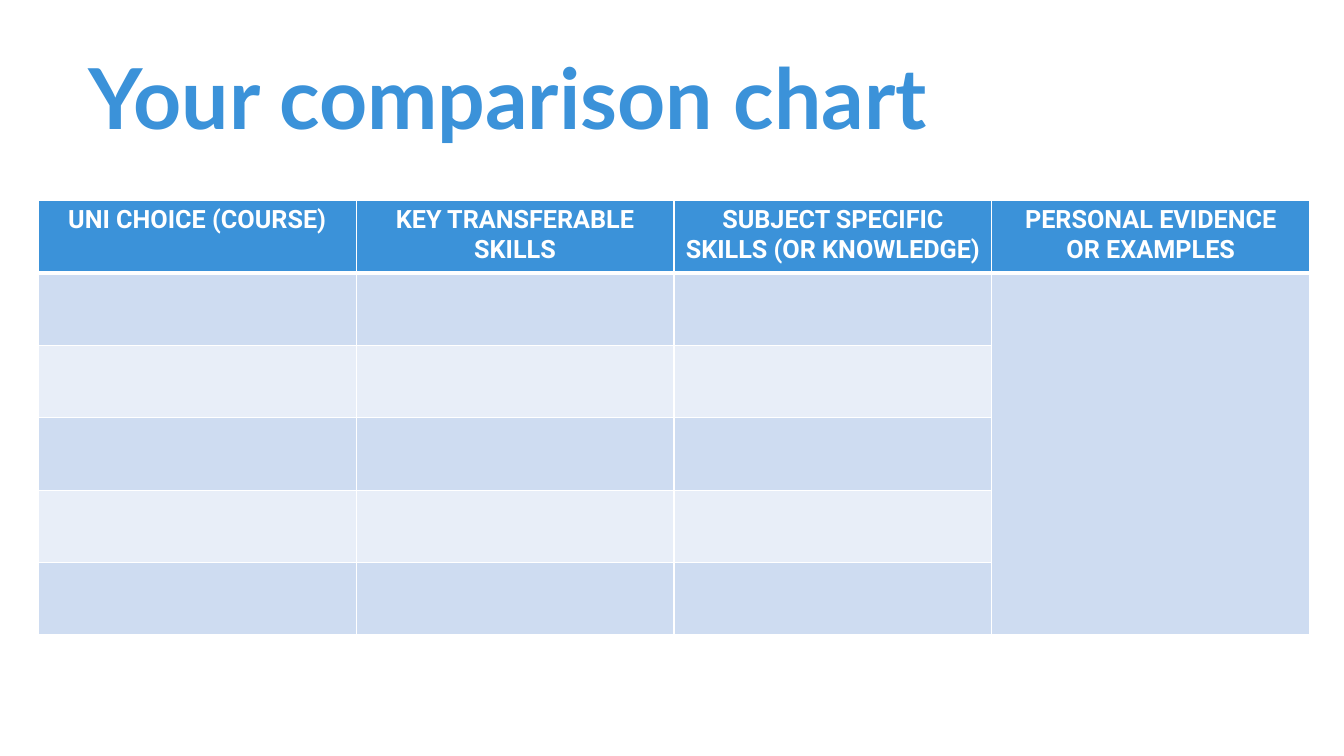
from lxml import etree
from pptx import Presentation
from pptx.dml.color import RGBColor
from pptx.enum.text import MSO_ANCHOR, PP_ALIGN
from pptx.oxml.ns import qn
from pptx.util import Inches, Pt

BLUE = RGBColor(0x3B, 0x92, 0xD9)
DARK = RGBColor(0xCE, 0xDC, 0xF1)
PALE = RGBColor(0xE8, 0xEE, 0xF8)
WHITE = RGBColor(0xFF, 0xFF, 0xFF)
LEFT, CENTER = PP_ALIGN.LEFT, PP_ALIGN.CENTER
BOTTOM = MSO_ANCHOR.BOTTOM

HEADS = [
    ["UNI CHOICE (COURSE)"],
    ["KEY TRANSFERABLE SKILLS"],
    ["SUBJECT SPECIFIC SKILLS (OR KNOWLEDGE)"],
    ["PERSONAL EVIDENCE", "OR EXAMPLES"],
]
ROWS, COLS = 6, len(HEADS)


def add_run(para, text, font, size, color):
    run = para.add_run()
    run.text = text
    run.font.name = font
    run.font.size = Pt(size)
    run.font.bold = True
    run.font.color.rgb = color


def add_edge(cell, side, width):
    props = cell._tc.get_or_add_tcPr()
    line = etree.SubElement(props, qn("a:ln" + side), w=str(Pt(width)))
    fill = etree.SubElement(line, qn("a:solidFill"))
    etree.SubElement(fill, qn("a:srgbClr"), val=str(WHITE))


prs = Presentation()
prs.slide_width = Inches(13.33)
prs.slide_height = Inches(7.5)
slide = prs.slides.add_slide(prs.slide_layouts[5])

frame = slide.shapes.add_table(
    ROWS, COLS, Inches(0.38), Inches(1.99), Inches(12.61), Inches(4.31))
table = frame.table

for r in range(ROWS):
    for c in range(COLS):
        cell = table.cell(r, c)
        for side in "LRTB":
            thick = (r, side) in [(0, "B"), (1, "T")]
            add_edge(cell, side, 3 if thick else 1)
        cell.fill.solid()
        cell.fill.fore_color.rgb = BLUE if r == 0 else DARK if r % 2 else PALE

table.cell(1, COLS - 1).merge(table.cell(ROWS - 1, COLS - 1))

for c, lines in enumerate(HEADS):
    frame = table.cell(0, c).text_frame
    for i, text in enumerate(lines):
        para = frame.add_paragraph() if i else frame.paragraphs[0]
        para.alignment = CENTER
        add_run(para, text, "Roboto", 18, WHITE)

title = slide.shapes.title
title.left, title.top = Inches(0.88), Inches(0.52)
title.width, title.height = Inches(10.64), Inches(0.94)
frame = title.text_frame
frame.margin_left = frame.margin_right = 0
frame.margin_top = frame.margin_bottom = 0
frame.vertical_anchor = BOTTOM
frame.word_wrap = False
para = frame.paragraphs[0]
para.alignment = LEFT
para.line_spacing = 0.9
add_run(para, "Your comparison chart", "Lato", 60, BLUE)

prs.save("out.pptx")
